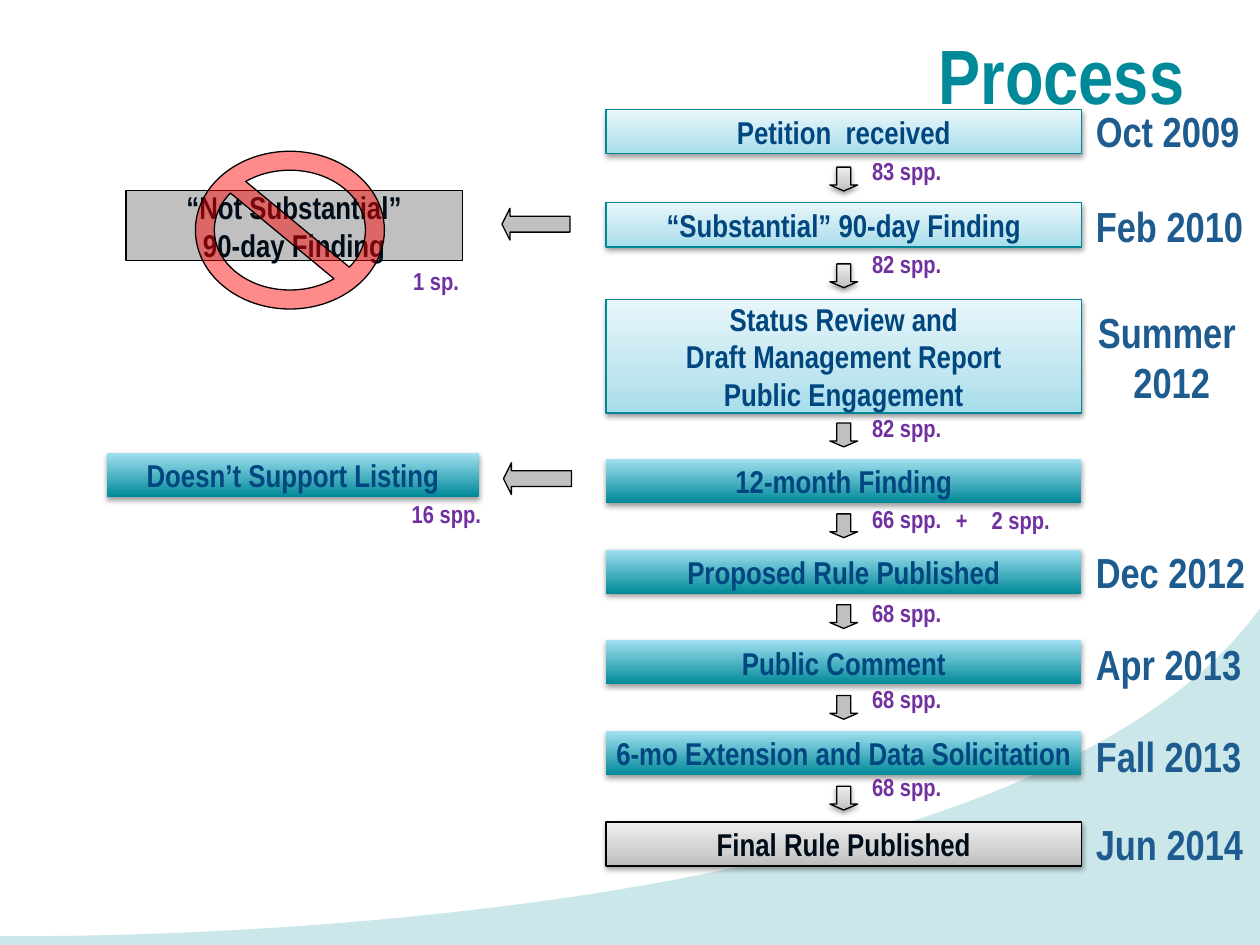
from lxml import etree
from pptx import Presentation
from pptx.dml.color import RGBColor
from pptx.enum import shapes, text
from pptx.oxml import ns
from pptx.util import Cm, Pt

FONT = "Arial Narrow"
COLORS = {
    "wave": "CCE7EA", "title": "008998", "step": "00467F", "dark": "000D18",
    "date": "1E5C90", "count": "7030A0", "edge": "008695",
    "grey": "C0C0C0", "black": "000000", "red": "FF0000",
}
# Gradient stops run from the bottom of the shape to its top
GRADIENTS = {
    "pale": [(0, "A6DDEB"), (35, "C1E6F0"), (100, "E7F6FA")],
    "teal": [(0, "008998"), (100, "A0E0F1")],
    "silver": [(0, "BDBDBD"), (35, "D1D1D1"), (100, "EEEEEE")],
}

COLUMN_LEFT, COLUMN_WIDTH, BOX_HEIGHT = 12.22, 9.58, 0.89
LATER_TOP, LATER_PITCH = 9.25, 1.83
ARROW_WIDTH, ARROW_HEIGHT, ARROW_RISE = 0.56, 0.48, 0.72
COUNT_LEFT, COUNT_WIDTH, COUNT_HEIGHT = 17.33, 1.93, 0.86
DATE_LEFT, DATE_WIDTH = 21.84, 3.56

# Wording, top, height, gradient, outline, text colour
STEPS = [
    ("Petition  received", 2.21, BOX_HEIGHT, "pale", "edge", "step"),
    ("“Substantial” 90-day Finding", 4.09, BOX_HEIGHT, "pale", "edge", "step"),
    ("Status Review and\vDraft Management Report\nPublic Engagement",
     6.04, 2.29, "pale", "edge", "step"),
] + [
    (wording, LATER_TOP + i * LATER_PITCH, BOX_HEIGHT, *style)
    for i, (wording, *style) in enumerate([
        ("12-month Finding", "teal", None, "step"),
        ("Proposed Rule Published", "teal", None, "step"),
        ("Public Comment", "teal", None, "step"),
        ("6-mo Extension and Data Solicitation", "teal", None, "step"),
        ("Final Rule Published", "silver", "black", "dark"),
    ])
]
# Fill of the arrow leading into each step after the first
ARROW_FILLS = ["silver", "silver", "grey", "grey", "grey", "grey", "silver"]
# Wording, left, top, width
COUNTS = [
    (wording, COUNT_LEFT, top, COUNT_WIDTH) for wording, top in [
        ("83 spp.", 3.02), ("82 spp.", 4.9), ("82 spp.", 8.2), ("66 spp.", 10.03),
        ("68 spp.", 11.94), ("68 spp.", 13.67), ("68 spp.", 15.44)]
] + [
    ("+", 19.02, 10.06, 0.76), ("2 spp.", 19.74, 10.06, 1.7),
    ("1 sp.", 8.08, 5.23, 1.45), ("16 spp.", 8.05, 9.93, COUNT_WIDTH),
]
DATES = [
    ("Oct 2009", 2.01), ("Feb 2010", 3.91), ("Summer \n2012", 6.05),
    ("Dec 2012", 10.9), ("Apr 2013", 12.75), ("Fall 2013", 14.6),
    ("Jun 2014", 16.38),
]


def color(name):
    return RGBColor.from_string(COLORS[name])


def add_element(parent, tag, **attributes):
    values = {key: str(value) for key, value in attributes.items()}
    return etree.SubElement(parent, ns.qn(tag), values)


def write_text(shape, wording, size=18, fill="step", align="CENTER",
               anchor="MIDDLE", wrap=False, spacing=None):
    frame = shape.text_frame
    frame.word_wrap = wrap
    frame.vertical_anchor = getattr(text.MSO_ANCHOR, anchor)
    frame.text = wording
    for paragraph in frame.paragraphs:
        paragraph.alignment = getattr(text.PP_ALIGN, align)
        paragraph.line_spacing = spacing
        for run in paragraph.runs:
            run.font.name, run.font.size, run.font.bold = FONT, Pt(size), True
            run.font.color.rgb = color(fill)


def add_label(slide, wording, left, top, width, height, **text_format):
    box = slide.shapes.add_textbox(Cm(left), Cm(top), Cm(width), Cm(height))
    write_text(box, wording, **text_format)


def set_gradient(shape, stops):
    gradient = etree.Element(ns.qn("a:gradFill"), rotWithShape="1")
    stop_list = add_element(gradient, "a:gsLst")
    for position, value in stops:
        stop = add_element(stop_list, "a:gs", pos=position * 1000)
        add_element(stop, "a:srgbClr", val=value)
    add_element(gradient, "a:lin", ang=270 * 60000, scaled=0)
    shape._element.spPr.find(ns.qn("a:prstGeom")).addnext(gradient)


def set_shadow(shape):
    effects = shape._element.spPr.find(ns.qn("a:effectLst"))
    shadow = add_element(effects, "a:outerShdw", blurRad=Pt(3.1), dist=Pt(1.6),
                         dir=90 * 60000, rotWithShape=0)
    shade = add_element(shadow, "a:srgbClr", val=COLORS["black"])
    add_element(shade, "a:alpha", val=38000)


def add_figure(slide, kind, left, top, width, height, fill, line="black"):
    """Add a preset shape; a gradient fill brings a soft shadow with it."""
    shape = slide.shapes.add_shape(getattr(shapes.MSO_SHAPE, kind),
                                   Cm(left), Cm(top), Cm(width), Cm(height))
    shape.shadow.inherit = False
    if fill in GRADIENTS:
        set_gradient(shape, GRADIENTS[fill])
        set_shadow(shape)
    else:
        shape.fill.solid()
        shape.fill.fore_color.rgb = color(fill)
    if line:
        shape.line.color.rgb = color(line)
        shape.line.width = Pt(0.75)
    else:
        shape.line.fill.background()
    return shape


def add_wave(slide):
    """Fill the corner below a cubic curve."""
    curve = [(0, 18.87), (0.05, 18.87), (20.37, 19.23), (25.4, 12.27)]
    count = 60
    points = []
    for i in range(count + 1):
        t = i / count
        weights = ((1 - t) ** 3, 3 * t * (1 - t) ** 2, 3 * t * t * (1 - t), t ** 3)
        points.append(tuple(Cm(sum(w * p[axis] for w, p in zip(weights, curve)))
                            for axis in (0, 1)))
    points += [(Cm(25.4), Cm(19.05)), (0, Cm(19.05))]
    builder = slide.shapes.build_freeform(*points[0])
    builder.add_line_segments(points[1:], close=True)
    wave = builder.convert_to_shape()
    wave.shadow.inherit = False
    wave.fill.solid()
    wave.fill.fore_color.rgb = color("wave")
    wave.line.fill.background()


def add_prohibition_sign(slide):
    sign = add_figure(slide, "NO_SYMBOL", 3.94, 3.05, 3.81, 3.18, "red")
    sign.adjustments[0] = 0.12
    red = sign._element.spPr.find(ns.qn("a:solidFill"))[0]
    add_element(red, "a:alpha", val=46000)


def main():
    presentation = Presentation()
    presentation.slide_width, presentation.slide_height = Cm(25.4), Cm(19.05)
    slide = presentation.slides.add_slide(presentation.slide_layouts[6])

    # Background and title
    add_wave(slide)
    add_label(slide, "Process", 1.27, 0.72, 22.86, 1.88, size=44, fill="title",
              align="RIGHT", wrap=True, spacing=0.8)

    # Main column of steps
    for wording, top, height, fill, line, text_color in STEPS:
        box = add_figure(slide, "RECTANGLE", COLUMN_LEFT, top, COLUMN_WIDTH,
                         height, fill, line)
        write_text(box, wording, fill=text_color)

    # Arrows between the steps
    arrow_left = COLUMN_LEFT + (COLUMN_WIDTH - ARROW_WIDTH) / 2
    for step, fill in zip(STEPS[1:], ARROW_FILLS):
        add_figure(slide, "DOWN_ARROW", arrow_left, step[1] - ARROW_RISE,
                   ARROW_WIDTH, ARROW_HEIGHT, fill).adjustments[1] = 0.25

    # Outcomes on the left
    rejected = add_figure(slide, "RECTANGLE", 2.54, 3.84, 6.78, 1.42, "grey")
    write_text(rejected, "“Not Substantial”\n90-day Finding", fill="dark")
    add_prohibition_sign(slide)
    unsupported = add_figure(slide, "RECTANGLE", 2.16, 9.13, 7.49, BOX_HEIGHT,
                             "teal", None)
    write_text(unsupported, "Doesn’t Support Listing")
    for left, top in [(10.12, 4.2), (10.15, 9.33)]:
        add_figure(slide, "LEFT_ARROW", left, top, 1.37, 0.64,
                   "grey").adjustments[1] = 0.25

    # Species counts
    for wording, left, top, width in COUNTS:
        add_label(slide, wording, left, top, width, COUNT_HEIGHT, size=14,
                  fill="count", align="LEFT", anchor="TOP")

    # Dates
    for wording, top in DATES:
        lines = wording.count("\n") + 1
        add_label(slide, wording, DATE_LEFT, top, DATE_WIDTH, 0.27 + 1.02 * lines,
                  size=24, fill="date", align="CENTER" if lines > 1 else "LEFT",
                  anchor="TOP")

    presentation.save("out.pptx")


if __name__ == "__main__":
    main()
